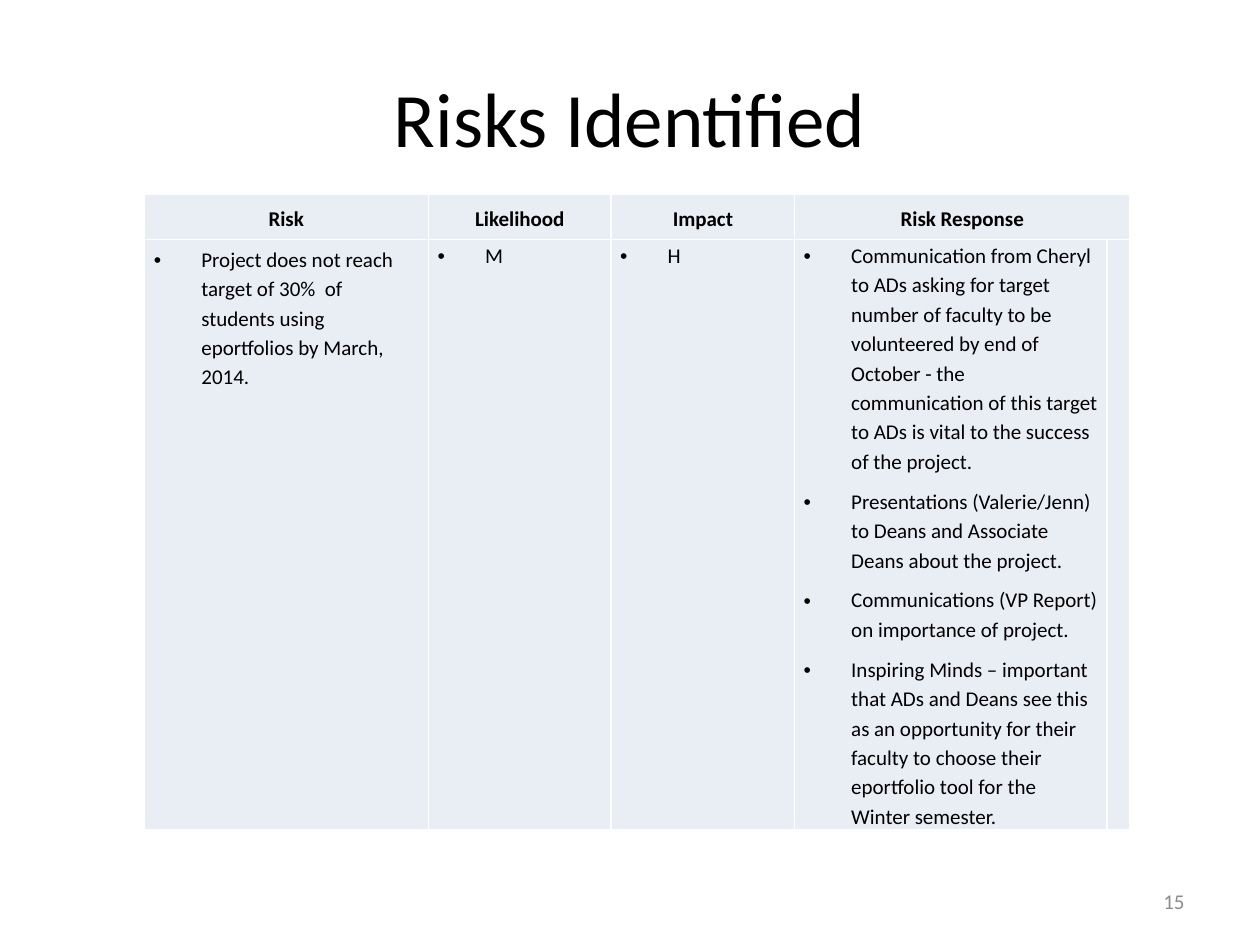
from lxml.etree import SubElement
from pptx import Presentation
from pptx.dml.color import RGBColor
from pptx.enum.text import MSO_ANCHOR, PP_ALIGN
from pptx.oxml import parse_xml
from pptx.oxml.ns import nsdecls, qn
from pptx.util import Cm, Pt

BLACK = RGBColor(0x00, 0x00, 0x00)
GREY = RGBColor(0x8C, 0x8C, 0x8C)
PALE = RGBColor(0xE9, 0xED, 0xF4)
WHITE = RGBColor(0xFF, 0xFF, 0xFF)

HEADS = ["Risk", "Likelihood", "Impact", "Risk Response"]
BODY = [
    ["Project does not reach target of 30%  of students using eportfolios by March, 2014."],
    ["M"],
    ["H"],
    [
        "Communication from Cheryl to ADs asking for target number of faculty to be "
        "volunteered by end of October - the communication of this target to ADs is "
        "vital to the success of the project.",
        "Presentations (Valerie/Jenn) to Deans and Associate Deans about the project.",
        "Communications (VP Report) on importance of project.",
        "Inspiring Minds – important that ADs and Deans see this as an opportunity for "
        "their faculty to choose their eportfolio tool for the Winter semester.",
    ],
]


def add_run(para, text, size, color=BLACK, bold=False):
    run = para.add_run()
    run.text = text
    run.font.name = "Calibri"
    run.font.size = Pt(size)
    run.font.bold = bold
    run.font.color.rgb = color


def set_pads(cell, side, end):
    cell.margin_left = cell.margin_right = Cm(side)
    cell.margin_top = cell.margin_bottom = Cm(end)


deck = Presentation()
deck.slide_width, deck.slide_height = Cm(25.4), Cm(19.05)
slide = deck.slides.add_slide(deck.slide_layouts[6])

# Title and page number
labels = [
    ("Risks Identified", (1.27, 0.76, 22.86, 3.18), PP_ALIGN.CENTER, 44, BLACK),
    ("15", (18.2, 17.66, 5.93, 1.01), PP_ALIGN.RIGHT, 12, GREY),
]
for text, place, align, size, color in labels:
    frame = slide.shapes.add_textbox(*[Cm(n) for n in place]).text_frame
    frame.word_wrap = True
    frame.vertical_anchor = MSO_ANCHOR.MIDDLE
    para = frame.paragraphs[0]
    para.alignment = align
    add_run(para, text, size, color)

# Risk table, with a second row tall enough for the longest list
widths = [5.74, 3.68, 3.7, 6.3, 0.38]
heights = [0.91, 11.89]
table = slide.shapes.add_table(
    2, 5, Cm(2.9), Cm(3.92), Cm(sum(widths)), Cm(sum(heights))
).table
table.horz_banding = False
for col, width in zip(table.columns, widths):
    col.width = Cm(width)
for row, height in zip(table.rows, heights):
    row.height = Cm(height)

for cell in table.iter_cells():
    set_pads(cell, 0.18, 0)
    cell.fill.solid()
    cell.fill.fore_color.rgb = PALE
    props = cell._tc.get_or_add_tcPr()
    for spot, side in enumerate(["lnL", "lnR", "lnT", "lnB"]):
        props.insert(spot, parse_xml(
            f'<a:{side} {nsdecls("a")} w="{Pt(1)}"><a:solidFill>'
            f'<a:srgbClr val="{WHITE}"/></a:solidFill></a:{side}>'
        ))
table.cell(0, 3).merge(table.cell(0, 4))

for col, head in enumerate(HEADS):
    cell = table.cell(0, col)
    set_pads(cell, 0.2, 0.08)
    cell.vertical_anchor = MSO_ANCHOR.MIDDLE
    para = cell.text_frame.paragraphs[0]
    para.alignment = PP_ALIGN.CENTER
    para.line_spacing = 1.15
    add_run(para, head, 12, bold=True)

set_pads(table.cell(1, 0), 0.2, 0.08)
for col, items in enumerate(BODY):
    frame = table.cell(1, col).text_frame
    for num, item in enumerate(items):
        para = frame.add_paragraph() if num else frame.paragraphs[0]
        props = para._p.get_or_add_pPr()
        props.set("marL", str(Cm(0.96)))
        props.set("indent", str(Cm(-0.96)))
        SubElement(props, qn("a:buFont"), typeface="Arial")
        SubElement(props, qn("a:buChar"), char="•")
        tabs = SubElement(props, qn("a:tabLst"))
        SubElement(tabs, qn("a:tab"), pos=str(Cm(0.64)), algn="l")
        para.line_spacing = 1.15
        para.space_after = Pt(6)
        add_run(para, item, 12)

deck.save("out.pptx")
